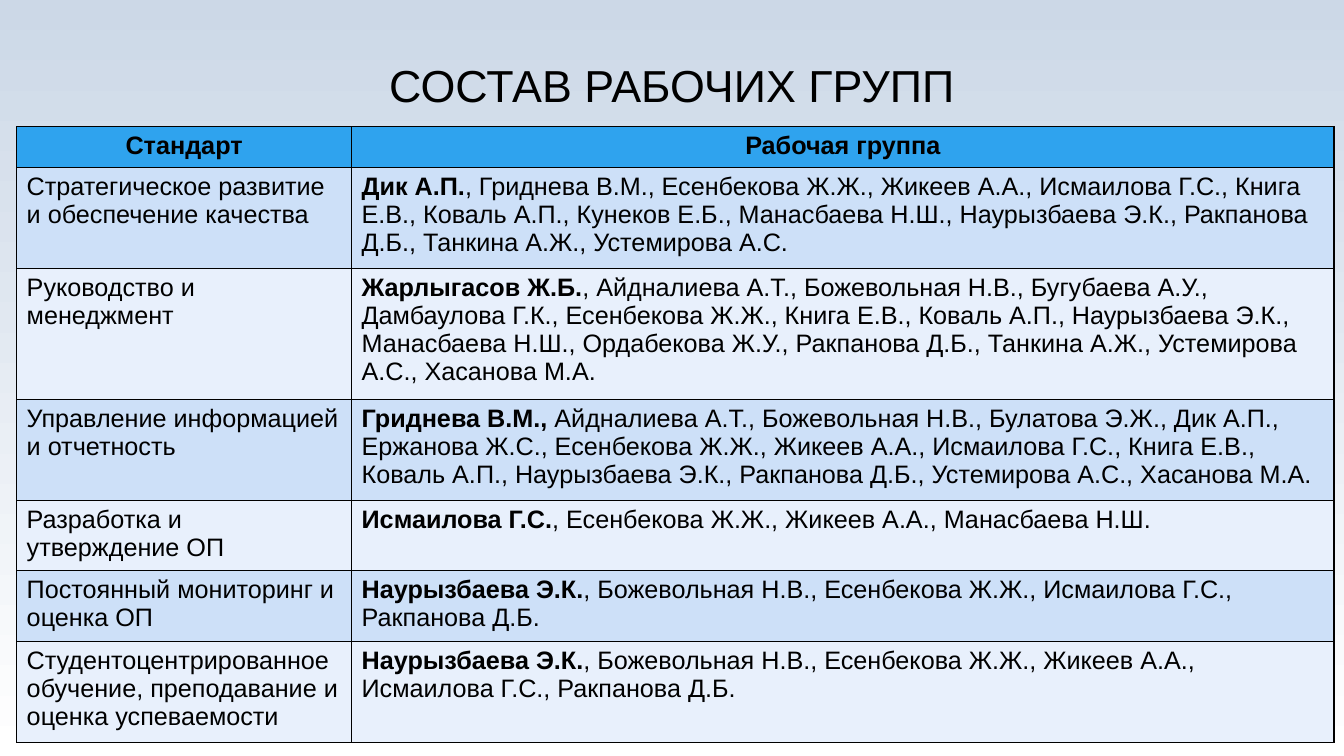
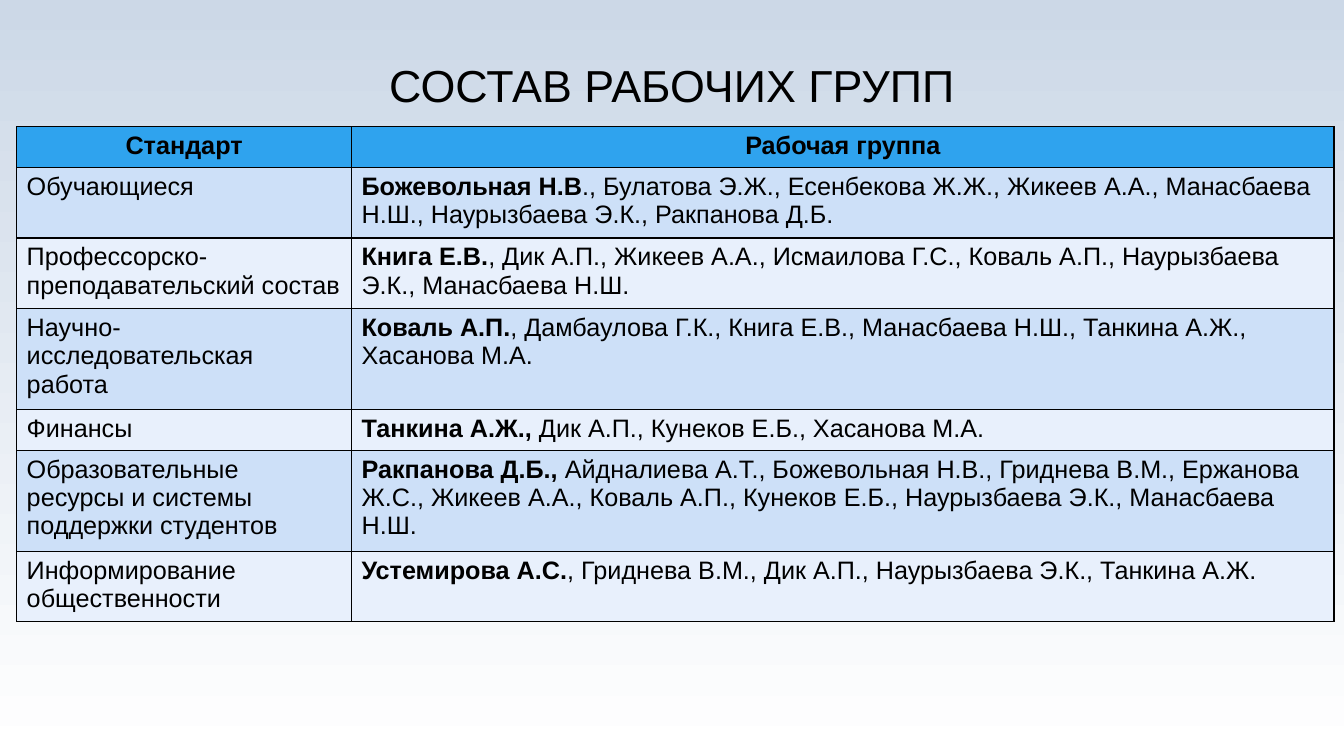
from lxml import etree
from pptx import Presentation
from pptx.dml.color import RGBColor
from pptx.enum.text import MSO_ANCHOR, PP_ALIGN
from pptx.oxml.ns import qn
from pptx.util import Cm, Pt

TITLE = "СОСТАВ РАБОЧИХ ГРУПП"
HEADS = ("Стандарт", "Рабочая группа")
GROUPS = [
    [
        ("Стратегическое развитие и обеспечение качества", "Дик А.П.",
         ", Гриднева В.М., Есенбекова Ж.Ж., Жикеев А.А., Исмаилова Г.С., Книга Е.В., "
         "Коваль А.П., Кунеков Е.Б., Манасбаева Н.Ш., Наурызбаева Э.К., Ракпанова Д.Б., "
         "Танкина А.Ж., Устемирова А.С."),
        ("Руководство и менеджмент", "Жарлыгасов Ж.Б.",
         ", Айдналиева А.Т., Божевольная Н.В., Бугубаева А.У.,\n"
         "Дамбаулова Г.К., Есенбекова Ж.Ж., Книга Е.В., Коваль А.П., Наурызбаева Э.К., "
         "Манасбаева Н.Ш., Ордабекова Ж.У., Ракпанова Д.Б., Танкина А.Ж., "
         "Устемирова А.С., Хасанова М.А."),
        ("Управление информацией и отчетность", "Гриднева В.М., ",
         "Айдналиева А.Т., Божевольная Н.В., Булатова Э.Ж., Дик А.П., Ержанова Ж.С., "
         "Есенбекова Ж.Ж., Жикеев А.А., Исмаилова Г.С., Книга Е.В., Коваль А.П., "
         "Наурызбаева Э.К., Ракпанова Д.Б., Устемирова А.С., Хасанова М.А."),
        ("Разработка и утверждение ОП", "Исмаилова Г.С.",
         ", Есенбекова Ж.Ж., Жикеев А.А., Манасбаева Н.Ш."),
        ("Постоянный мониторинг и оценка ОП", "Наурызбаева Э.К.",
         ", Божевольная Н.В., Есенбекова Ж.Ж., Исмаилова Г.С.,\nРакпанова Д.Б."),
        ("Студентоцентрированное обучение, преподавание и оценка успеваемости",
         "Наурызбаева Э.К.",
         ", Божевольная Н.В., Есенбекова Ж.Ж., Жикеев А.А., Исмаилова Г.С., Ракпанова Д.Б."),
    ],
    [
        ("Обучающиеся", "Божевольная Н.В",
         "., Булатова Э.Ж., Есенбекова Ж.Ж., Жикеев А.А., Манасбаева Н.Ш., "
         "Наурызбаева Э.К., Ракпанова Д.Б."),
        ("Профессорско-преподавательский состав", "Книга Е.В.",
         ", Дик А.П., Жикеев А.А., Исмаилова Г.С., Коваль А.П., Наурызбаева Э.К., "
         "Манасбаева Н.Ш."),
        ("Научно-исследовательская работа", "Коваль А.П.",
         ", Дамбаулова Г.К., Книга Е.В., Манасбаева Н.Ш., Танкина А.Ж., Хасанова М.А."),
        ("Финансы", "Танкина А.Ж., ", "Дик А.П., Кунеков Е.Б., Хасанова М.А."),
        ("Образовательные ресурсы и системы поддержки студентов", "Ракпанова Д.Б., ",
         "Айдналиева А.Т., Божевольная Н.В., Гриднева В.М., Ержанова Ж.С., Жикеев А.А., "
         "Коваль А.П., Кунеков Е.Б., Наурызбаева Э.К., Манасбаева Н.Ш."),
        ("Информирование общественности", "Устемирова А.С.",
         ", Гриднева В.М., Дик А.П., Наурызбаева Э.К., Танкина А.Ж."),
    ],
]

BLACK = RGBColor(0x00, 0x00, 0x00)
SKY = RGBColor(0xCC, 0xD8, 0xE7)
WHITE = RGBColor(0xFF, 0xFF, 0xFF)
BLUE = RGBColor(0x2F, 0xA3, 0xEE)
BANDS = (RGBColor(0xCD, 0xE0, 0xF8), RGBColor(0xE8, 0xF0, 0xFC))
CENTER = PP_ALIGN.CENTER
MIDDLE = MSO_ANCHOR.MIDDLE
FONT = {"name": "Arial", "size": Pt(18), "bold": False}
BOLD = {**FONT, "bold": True}
LARGE = {**FONT, "size": Pt(32)}
PLAIN = {"first_row": False, "horz_banding": False}
WIDE, HIGH = Cm(33.87), Cm(19.05)
COLS = (Cm(8.44), Cm(24.76))
ROW = Cm(1.03)


def add_run(para, text, style):
    run = para.add_run()
    run.text = text
    for key, val in style.items():
        setattr(run.font, key, val)
    run.font.color.rgb = BLACK


def add_base(deck):
    slide = deck.slides.add_slide(deck.slide_layouts[6])
    fill = slide.background.fill
    fill.gradient()
    fill.gradient_angle = 270
    for stop, color in zip(fill.gradient_stops, (SKY, WHITE)):
        stop.color.rgb = color
    box = slide.shapes.add_textbox(Cm(2.54), 0, WIDE - 2 * Cm(2.54), Cm(4.45))
    frame = box.text_frame
    frame.word_wrap = True
    frame.vertical_anchor = MIDDLE
    para = frame.paragraphs[0]
    para.alignment = CENTER
    para.line_spacing = 0.9
    add_run(para, TITLE, LARGE)
    return slide


def paint(cell, color):
    props = cell._tc.get_or_add_tcPr()
    for side in ("a:lnL", "a:lnR", "a:lnT", "a:lnB"):
        line = etree.SubElement(props, qn(side), w=str(Pt(1)))
        solid = etree.SubElement(line, qn("a:solidFill"))
        etree.SubElement(solid, qn("a:srgbClr"), val=str(BLACK))
    cell.fill.solid()
    cell.fill.fore_color.rgb = color


def add_groups(slide, rows):
    count = len(rows) + 1
    table = slide.shapes.add_table(
        count, len(COLS), Cm(0.42), Cm(3.19), sum(COLS), ROW * count).table
    for key, val in PLAIN.items():
        setattr(table, key, val)
    for col, width in zip(table.columns, COLS):
        col.width = width
    for row in table.rows:
        row.height = ROW
    for col, head in enumerate(HEADS):
        cell = table.cell(0, col)
        paint(cell, BLUE)
        para = cell.text_frame.paragraphs[0]
        para.alignment = CENTER
        add_run(para, head, BOLD)
    for num, (name, lead, team) in enumerate(rows, 1):
        left, right = table.cell(num, 0), table.cell(num, 1)
        for cell in (left, right):
            paint(cell, BANDS[(num - 1) % 2])
        add_run(left.text_frame.paragraphs[0], name, FONT)
        frame = right.text_frame
        first, *more = team.split("\n")
        add_run(frame.paragraphs[0], lead, BOLD)
        add_run(frame.paragraphs[0], first, FONT)
        for text in more:
            add_run(frame.add_paragraph(), text, FONT)


def main():
    deck = Presentation()
    deck.slide_width, deck.slide_height = WIDE, HIGH
    for rows in GROUPS:
        add_groups(add_base(deck), rows)
    deck.save("out.pptx")


if __name__ == "__main__":
    main()
